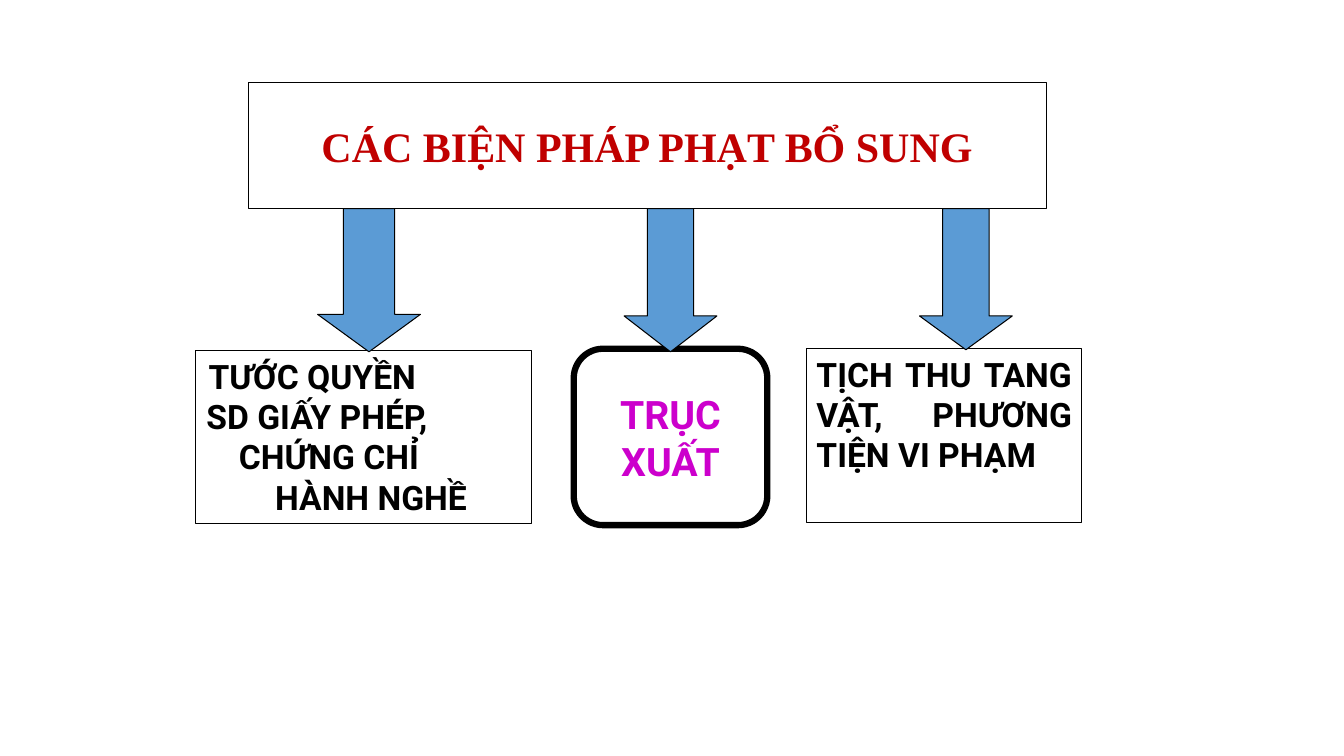
import pptx
import pptx.dml.color
import pptx.enum.shapes
import pptx.enum.text
import pptx.util
from dataclasses import dataclass

Inches = pptx.util.Inches
Pt = pptx.util.Pt
SHAPE = pptx.enum.shapes.MSO_SHAPE
ALIGN = pptx.enum.text.PP_ALIGN
ANCHOR = pptx.enum.text.MSO_ANCHOR


@dataclass(frozen=True)
class Theme:
    """Colours, fonts and type sizes of the slide."""
    line: str = "000000"
    arrow: str = "5B9BD5"
    title: str = "C00000"
    text: str = "000000"
    accent: str = "CC00CC"
    title_font: str = "Times New Roman"
    body_font: str = "Roboto"
    title_size: int = 30
    body_size: int = 24
    accent_size: int = 28


THEME = Theme()


def rgb(value):
    """Return a colour from its hex form."""
    return pptx.dml.color.RGBColor.from_string(value)


def add_outlined(slide, kind, box, fill=None, width=0.75):
    """Add an outlined preset shape without shadow."""
    s = slide.shapes.add_shape(kind, *map(Inches, box))
    s.shadow.inherit = False
    if fill:
        s.fill.solid()
        s.fill.fore_color.rgb = rgb(fill)
    else:
        s.fill.background()
    s.line.color.rgb = rgb(THEME.line)
    s.line.width = Pt(width)
    return s


def write(s, lines, size, color, font=THEME.body_font, align=ALIGN.CENTER,
          anchor=ANCHOR.TOP, wrap=True, indents=None):
    """Write bold paragraphs into a shape, each with an optional left indent."""
    tf = s.text_frame
    tf.word_wrap = wrap
    tf.vertical_anchor = anchor
    for i, line in enumerate(lines):
        p = tf.paragraphs[0] if i == 0 else tf.add_paragraph()
        p.alignment = align
        if indents:
            p._p.get_or_add_pPr().set("marL", str(Inches(indents[i])))
        r = p.add_run()
        r.text = line
        r.font.name = font
        r.font.size = Pt(size)
        r.font.bold = True
        r.font.color.rgb = rgb(color)


def add_arrow(slide, left, width, height, head):
    """Add a down arrow that hangs from the title box."""
    s = add_outlined(slide, SHAPE.DOWN_ARROW, (left, 2.07, width, height), THEME.arrow)
    s.adjustments[0] = 0.5
    s.adjustments[1] = head


def main():
    """Build and save the slide."""
    prs = pptx.Presentation()
    prs.slide_width, prs.slide_height = Inches(13.33), Inches(7.5)
    slide = prs.slides.add_slide(prs.slide_layouts[6])

    title = add_outlined(slide, SHAPE.RECTANGLE, (2.46, 0.82, 7.92, 1.25))
    write(title, ["CÁC BIỆN PHÁP PHẠT BỔ SUNG"], THEME.title_size, THEME.title,
          font=THEME.title_font, anchor=ANCHOR.MIDDLE)

    licence = add_outlined(slide, SHAPE.RECTANGLE, (1.94, 3.48, 3.33, 1.71))
    write(licence, ["TƯỚC QUYỀN", "SD GIẤY PHÉP,", "CHỨNG CHỈ", "HÀNH NGHỀ"],
          THEME.body_size, THEME.text, align=ALIGN.LEFT,
          indents=[0.03, 0.01, 0.33, 0.69])

    expulsion = add_outlined(slide, SHAPE.ROUNDED_RECTANGLE, (5.69, 3.46, 1.92, 1.75),
                             width=4.5)
    write(expulsion, ["TRỤC", "XUẤT"], THEME.accent_size, THEME.accent,
          anchor=ANCHOR.MIDDLE, wrap=False)

    seizure = add_outlined(slide, SHAPE.RECTANGLE, (8, 3.46, 2.73, 1.72))
    write(seizure, ["TỊCH THU TANG VẬT, PHƯƠNG TIỆN VI PHẠM"],
          THEME.body_size, THEME.text, align=ALIGN.JUSTIFY)

    for arrow in ((3.15, 1.02, 1.42, 0.364), (6.19, 0.92, 1.42, 0.386),
                  (9.12, 0.92, 1.4, 0.364)):
        add_arrow(slide, *arrow)

    prs.save("out.pptx")


if __name__ == "__main__":
    main()
